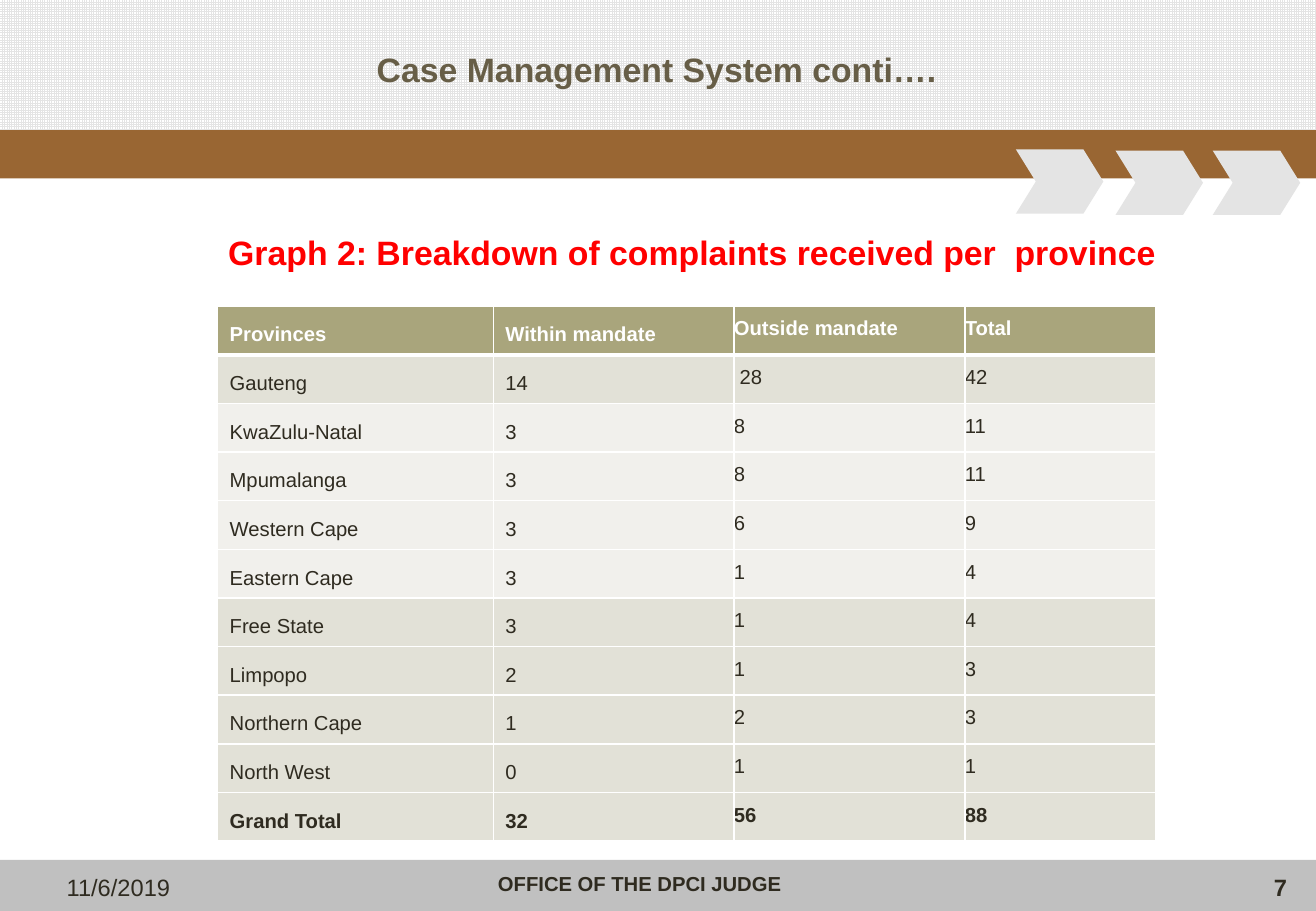
from dataclasses import dataclass

from lxml.etree import SubElement
from pptx import Presentation
from pptx.dml.color import RGBColor
from pptx.enum.dml import MSO_PATTERN
from pptx.enum.shapes import MSO_SHAPE as Shape
from pptx.enum.text import MSO_ANCHOR as Anchor, PP_ALIGN as Align
from pptx.oxml.ns import qn
from pptx.util import Inches, Pt


@dataclass(frozen=True)
class Theme:
    font: str = "Arial"
    white: str = "FFFFFF"
    ink: str = "2F2B20"
    title: str = "675E47"
    heading: str = "FF0000"
    brown: str = "996633"
    footer: str = "C0C0C0"
    pale: str = "E4E4E4"
    header_row: str = "A9A57C"
    dark_row: str = "E2E1D7"
    light_row: str = "F1F0EC"
    large: int = 20
    medium: int = 14
    small: int = 12


theme = Theme()


def write(frame, text, size, color, bold=False, align=Align.LEFT):
    frame.text = text
    para = frame.paragraphs[0]
    para.alignment = align
    span = para.runs[0]
    span.font.name = theme.font
    span.font.size = Pt(size)
    span.font.bold = bold
    span.font.color.rgb = RGBColor.from_string(color)
    return para


def add_block(page, kind, left, top, width, height, color):
    block = page.shapes.add_shape(kind, Inches(left), Inches(top), Inches(width), Inches(height))
    block.shadow.inherit = False
    block.fill.solid()
    block.fill.fore_color.rgb = RGBColor.from_string(color)
    block.line.fill.background()
    return block


deck = Presentation()
deck.slide_width = Inches(10.83)
deck.slide_height = Inches(7.5)
page = deck.slides.add_slide(deck.slide_layouts[5])

# Footer band, brown band, chevrons and patterned header
add_block(page, Shape.RECTANGLE, 0, 7.08, 10.83, 0.42, theme.footer)
add_block(page, Shape.RECTANGLE, 0, 1.07, 10.83, 0.4, theme.brown)
for left, top in [(8.36, 1.23), (9.18, 1.24), (9.98, 1.24)]:
    chevron = add_block(page, Shape.CHEVRON, left, top, 0.72, 0.53, theme.pale)
    chevron.adjustments[0] = 0.31
header = add_block(page, Shape.RECTANGLE, 0, 0, 10.83, 1.07, theme.white)
header.fill.patterned()
header.fill.pattern = MSO_PATTERN.SMALL_GRID
header.fill.fore_color.rgb = RGBColor.from_string(theme.pale)
header.fill.back_color.rgb = RGBColor.from_string(theme.white)

# Title, brought in front of the header
title = page.shapes.title
title.left, title.top = Inches(0.53), Inches(0.13)
title.width, title.height = Inches(9.75), Inches(0.87)
title.text_frame.vertical_anchor = Anchor.MIDDLE
write(title.text_frame, "Case Management System conti….", theme.large, theme.title, True, Align.CENTER)
title.element.getparent().append(title.element)

# Heading and footer texts
texts = [
    (1.78, 1.86, 8.5, 0.44, "Graph 2: Breakdown of complaints received per  province",
     theme.large, theme.heading, True, Align.LEFT),
    (4, 7.12, 2.83, 0.31, "OFFICE OF THE DPCI JUDGE", theme.small, theme.ink, True, Align.LEFT),
    (0.45, 7.14, 2.53, 0.34, "11/6/2019", theme.medium, theme.ink, False, Align.LEFT),
    (8.16, 7.14, 2.53, 0.34, "7", theme.medium, theme.ink, True, Align.RIGHT),
]
for left, top, width, height, *content in texts:
    box = page.shapes.add_textbox(Inches(left), Inches(top), Inches(width), Inches(height))
    box.text_frame.word_wrap = True
    write(box.text_frame, *content)

# Complaints table
rows = [
    ("Provinces", "Within mandate", "Outside mandate", "Total"),
    ("Gauteng", "14", " 28", "42"),
    ("KwaZulu-Natal", "3", "8", "11"),
    ("Mpumalanga", "3", "8", "11"),
    ("Western Cape", "3", "6", "9"),
    ("Eastern Cape", "3", "1", "4"),
    ("Free State", "3", "1", "4"),
    ("Limpopo", "2", "1", "3"),
    ("Northern Cape", "1", "2", "3"),
    ("North West", "0", "1", "1"),
    ("Grand Total", "32", "56", "88"),
]
widths = [2.27, 1.98, 1.9, 1.57]
table = page.shapes.add_table(len(rows), len(widths), Inches(1.79), Inches(2.52),
                              Inches(sum(widths)), Inches(0.4 * len(rows))).table
table.first_row = table.horz_banding = False
for column, width in zip(table.columns, widths):
    column.width = Inches(width)

for r, values in enumerate(rows):
    table.rows[r].height = Inches(0.4)
    is_header = r == 0
    if is_header:
        fill = theme.header_row
    else:
        fill = theme.light_row if 2 <= r <= 5 else theme.dark_row
    for c, value in enumerate(values):
        cell = table.cell(r, c)
        para = write(cell.text_frame, value, theme.small,
                     theme.white if is_header else theme.ink, r in (0, len(rows) - 1))
        para.line_spacing = 1.5
        if c >= 2:
            cell.margin_left = cell.margin_right = cell.margin_top = cell.margin_bottom = 0

        # White borders, thick below the header row
        borders = {"lnL": 1, "lnR": 1, "lnT": 3 if r == 1 else 1, "lnB": 3 if is_header else 1}
        for side, points in borders.items():
            line = SubElement(cell._tc.get_or_add_tcPr(), qn(f"a:{side}"), w=str(Pt(points)))
            SubElement(SubElement(line, qn("a:solidFill")), qn("a:srgbClr"), val=theme.white)
        cell.fill.solid()
        cell.fill.fore_color.rgb = RGBColor.from_string(fill)

deck.save("out.pptx")
